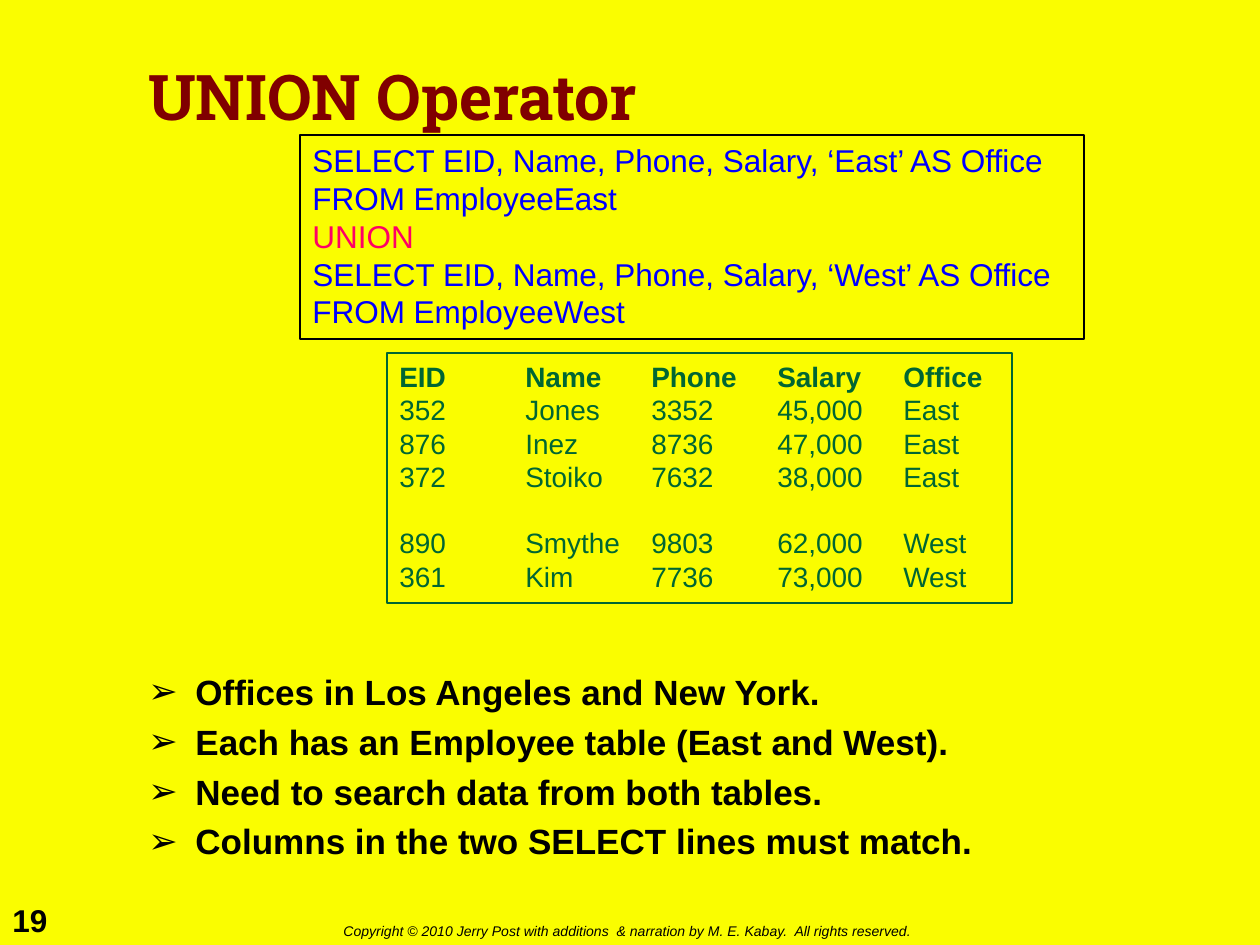
from dataclasses import dataclass

from lxml.etree import SubElement
from pptx import Presentation
from pptx.dml.color import RGBColor
from pptx.enum.shapes import MSO_SHAPE as Shape
from pptx.enum.text import MSO_ANCHOR as Anchor, PP_ALIGN as Align
from pptx.oxml.ns import qn
from pptx.util import Pt

SCALE = 914400 / 126


@dataclass(frozen=True)
class Theme:
    background: str = "FAFD00"
    title: str = "800000"
    ink: str = "000000"
    query: str = "0000FF"
    keyword: str = "FF0066"
    result: str = "006633"
    title_font: str = "Roboto Slab"
    body_font: str = "Arial"
    title_size: int = 36
    bullet_size: int = 20
    query_size: int = 18
    result_size: int = 16
    number_size: int = 18
    footer_size: int = 8


theme = Theme()


def add_box(left, top, width, height, outline=None):
    area = [round(length * SCALE) for length in (left, top, width, height)]
    if outline:
        shape = slide.shapes.add_shape(Shape.RECTANGLE, *area)
        shape.shadow.inherit = False
        shape.fill.background()
        shape.line.color.rgb = RGBColor.from_string(outline)
        shape.line.width = Pt(1)
    else:
        shape = slide.shapes.add_textbox(*area)
    frame = shape.text_frame
    frame.word_wrap = True
    frame.vertical_anchor = Anchor.TOP
    return frame


def add_text(frame, index, text, size, color, bold=False, italic=False, font=theme.body_font):
    paragraph = frame.add_paragraph() if index else frame.paragraphs[0]
    paragraph.alignment = Align.LEFT
    run = paragraph.add_run()
    run.text = text
    run.font.name = font
    run.font.size = Pt(size)
    run.font.bold = bold
    run.font.italic = italic
    run.font.color.rgb = RGBColor.from_string(color)
    return paragraph


presentation = Presentation()
presentation.slide_width = round(1260 * SCALE)
presentation.slide_height = round(945 * SCALE)
slide = presentation.slides.add_slide(presentation.slide_layouts[6])
slide.background.fill.solid()
slide.background.fill.fore_color.rgb = RGBColor.from_string(theme.background)

number = add_box(0, 895, 63, 50)
add_text(number, 0, "19", theme.number_size, theme.ink, bold=True)

footer = add_box(331, 916, 610, 30)
add_text(
    footer, 0,
    "Copyright © 2010 Jerry Post with additions  & narration by M. E. Kabay.  All rights reserved.",
    theme.footer_size, theme.ink, italic=True,
)

title = add_box(136, 21, 987, 158)
title.vertical_anchor = Anchor.MIDDLE
paragraph = add_text(title, 0, "UNION Operator", theme.title_size, theme.title, bold=True, font=theme.title_font)
paragraph.line_spacing = 0.9

bullets = [
    "Offices in Los Angeles and New York.",
    "Each has an Employee table (East and West).",
    "Need to search data from both tables.",
    "Columns in the two SELECT lines must match.",
]
body = add_box(136, 669, 987, 203)
for index, text in enumerate(bullets):
    paragraph = add_text(body, index, text, theme.bullet_size, theme.ink, bold=True)
    paragraph.line_spacing = 0.9
    if index:
        paragraph.space_before = Pt(6.9)
    properties = paragraph._p.get_or_add_pPr()
    indent = round(47 * SCALE)
    properties.set("marL", str(indent))
    properties.set("indent", str(-indent))
    bullet_color = SubElement(properties, qn("a:buClr"))
    SubElement(bullet_color, qn("a:srgbClr"), val=theme.ink)
    SubElement(properties, qn("a:buFont"), typeface=theme.body_font)
    SubElement(properties, qn("a:buChar"), char="➢")

query_lines = [
    "SELECT EID, Name, Phone, Salary, ‘East’ AS Office",
    "FROM EmployeeEast",
    "UNION",
    "SELECT EID, Name, Phone, Salary, ‘West’ AS Office",
    "FROM EmployeeWest",
]
query = add_box(300, 135, 784, 204, theme.query and theme.ink)
for index, text in enumerate(query_lines):
    color = theme.keyword if text == "UNION" else theme.query
    add_text(query, index, text, theme.query_size, color)

result_rows = [
    ("EID", "Name", "Phone", "Salary", "Office"),
    ("352", "Jones", "3352", "45,000", "East"),
    ("876", "Inez", "8736", "47,000", "East"),
    ("372", "Stoiko", "7632", "38,000", "East"),
    ("890", "Smythe", "9803", "62,000", "West"),
    ("361", "Kim", "7736", "73,000", "West"),
]
first_west_row = 4
result = add_box(387, 353, 625, 250, theme.result)
for index, row in enumerate(result_rows):
    paragraph = add_text(result, index, "\t".join(row), theme.result_size, theme.result, bold=index == 0)
    if index == first_west_row:
        paragraph.space_before = Pt(18.4)
    tab_list = SubElement(paragraph._p.get_or_add_pPr(), qn("a:tabLst"))
    for column in range(1, len(row)):
        SubElement(tab_list, qn("a:tab"), pos=str(round(126 * column * SCALE)), algn="l")

presentation.save("out.pptx")
